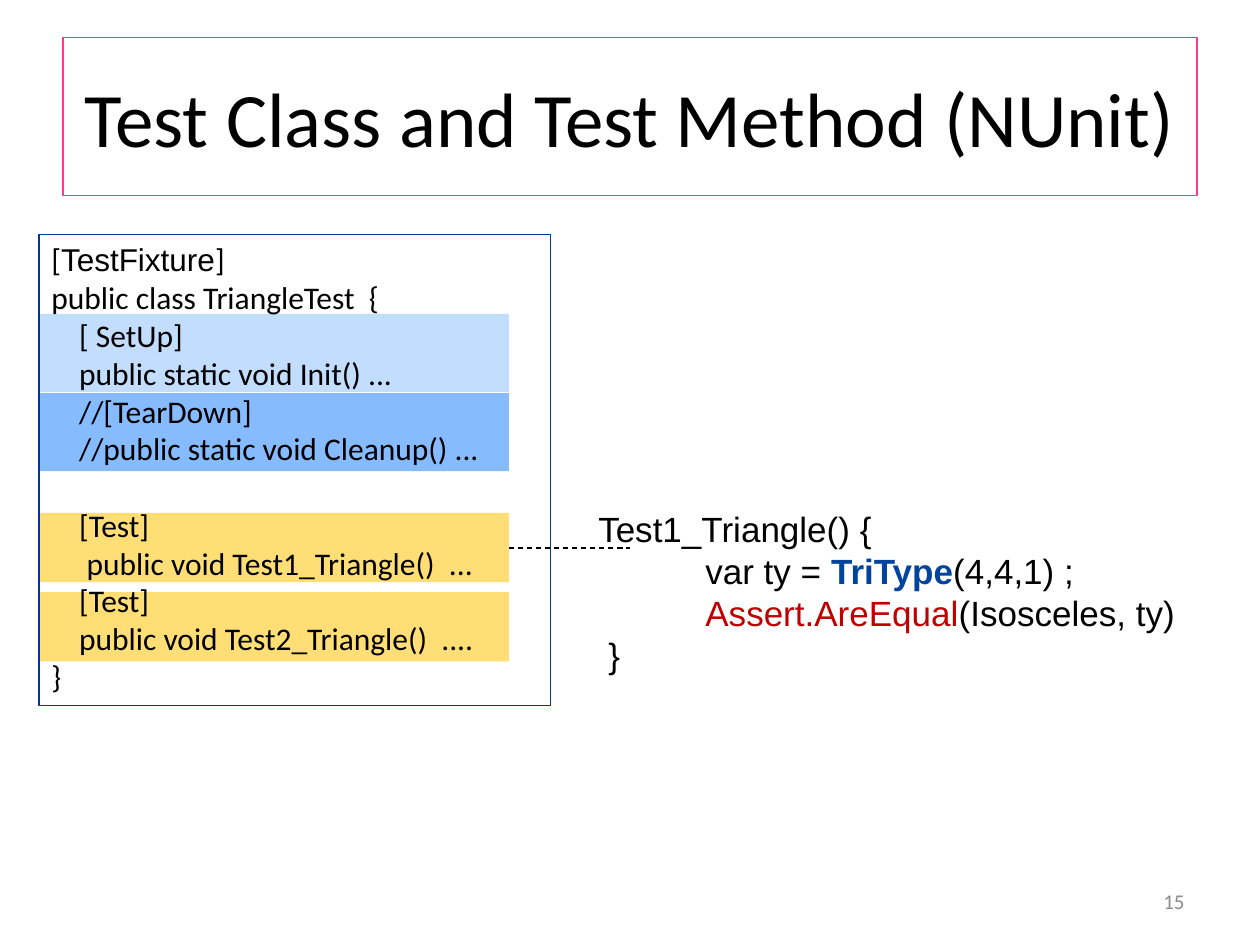
"""Build a slide on an NUnit test class and one of its test methods."""
from lxml import etree
from pptx import Presentation
from pptx.dml.color import RGBColor
from pptx.enum.dml import MSO_LINE
from pptx.enum.shapes import MSO_CONNECTOR, MSO_SHAPE
from pptx.enum.text import MSO_ANCHOR, PP_ALIGN
from pptx.oxml.ns import qn
from pptx.util import Inches, Pt

RECT, STRAIGHT, DASH = MSO_SHAPE.RECTANGLE, MSO_CONNECTOR.STRAIGHT, MSO_LINE.DASH
LEFT, CENTER, RIGHT = PP_ALIGN.LEFT, PP_ALIGN.CENTER, PP_ALIGN.RIGHT
TOP, MIDDLE = MSO_ANCHOR.TOP, MSO_ANCHOR.MIDDLE
rgb = RGBColor.from_string

prs = Presentation()
prs.slide_width, prs.slide_height = Inches(10), Inches(7.5)
COL, ROW = prs.slide_width / 100, prs.slide_height / 75


def grid(x, y, w, h):
    """Turn grid columns and rows into slide lengths."""
    return int(x * COL), int(y * ROW), int(w * COL), int(h * ROW)


def write(p, text, size=18, font="Calibri", color="000000", bold=False,
          align=LEFT, indent=0, before=0):
    """Add a formatted run to a paragraph and set the paragraph's layout."""
    p.alignment = align
    p.space_before = Pt(before)
    if indent:
        p._p.get_or_add_pPr().set("marL", str(int(indent * COL)))
    r = p.add_run()
    r.text = text
    r.font.size, r.font.name, r.font.bold = Pt(size), font, bold
    r.font.color.rgb = rgb(color)


s = prs.slides.add_slide(prs.slide_layouts[5])

title = s.shapes.title
title.left, title.top, title.width, title.height = grid(5, 3, 90, 12.5)
title.line.color.rgb = rgb("FF388C")
title.line.width = Pt(0.75)
title.text_frame.vertical_anchor = MIDDLE
write(title.text_frame.paragraphs[0], "Test Class and Test Method (NUnit)",
      size=44, align=CENTER)

for top, height, color in [(47, 5.5, "FFDE75"), (40.7, 5.5, "FFDE75"),
                           (31.2, 6.2, "87BBFF"), (24.9, 6.2, "C3DDFF")]:
    band = s.shapes.add_shape(RECT, *grid(3.1, top, 37.3, height))
    band.shadow.inherit = False
    band.fill.solid()
    band.fill.fore_color.rgb = rgb(color)
    band.line.fill.background()

frame = s.shapes.add_shape(RECT, *grid(3.1, 18.6, 40.6, 37.4))
frame.shadow.inherit = False
frame.fill.background()
frame.line.color.rgb = rgb("00349E")
frame.line.width = Pt(0.75)
method = s.shapes.add_textbox(*grid(46.5, 39.8, 53.4, 14.5))
number = s.shapes.add_textbox(*grid(71.7, 69.5, 23.3, 4))

CLASS_LINES = [
    (0, 0, [("[", {}), ("TestFixture", {"font": "Arial"}), ("]", {})]),
    (0, 0, [("public class TriangleTest  {", {})]),
    (2.2, 0, [("[ SetUp]", {})]),
    (2.2, 0, [("public static void Init() ...", {})]),
    (2.2, 0, [("//[TearDown]", {})]),
    (2.2, 0, [("//public static void Cleanup() ...", {})]),
    (2.2, 22, [("[Test]", {})]),
    (2.8, 0, [("public void Test1_Triangle()  ...", {})]),
    (2.2, 0, [("[Test]", {})]),
    (2.2, 0, [("public void Test2_Triangle()  ....", {})]),
    (0, 0, [("}", {})]),
]
METHOD_LINES = [
    (0, 0, [("Test1_Triangle() {", {})]),
    (8.5, 0, [("var ty = ", {}), ("TriType", {"color": "00449E", "bold": True}),
              ("(4,4,1) ;", {})]),
    (8.5, 0, [("Assert.AreEqual", {"color": "C00000"}), ("(Isosceles, ty)", {})]),
    (0.8, 0, [("}", {})]),
]
NUMBER_LINES = [(0, 0, [("15", {"color": "8C8C8C"})])]

for sp, lines, anchor, base in [
        (frame, CLASS_LINES, TOP, {}),
        (method, METHOD_LINES, TOP, {"size": 20, "font": "Arial"}),
        (number, NUMBER_LINES, MIDDLE, {"size": 12, "align": RIGHT})]:
    tf = sp.text_frame
    tf.word_wrap = True
    tf.vertical_anchor = anchor
    for i, (indent, before, runs) in enumerate(lines):
        p = tf.add_paragraph() if i else tf.paragraphs[0]
        for text, style in runs:
            write(p, text, indent=indent, before=before, **{**base, **style})

x, y, w, h = grid(40.4, 43.5, 9.6, 0)
link = s.shapes.add_connector(STRAIGHT, x, y, x + w, y + h)
link.line.color.rgb = rgb("000000")
link.line.width = Pt(0.75)
link.line.dash_style = DASH
etree.SubElement(link._element.spPr, qn("a:effectLst"))

prs.save("out.pptx")
